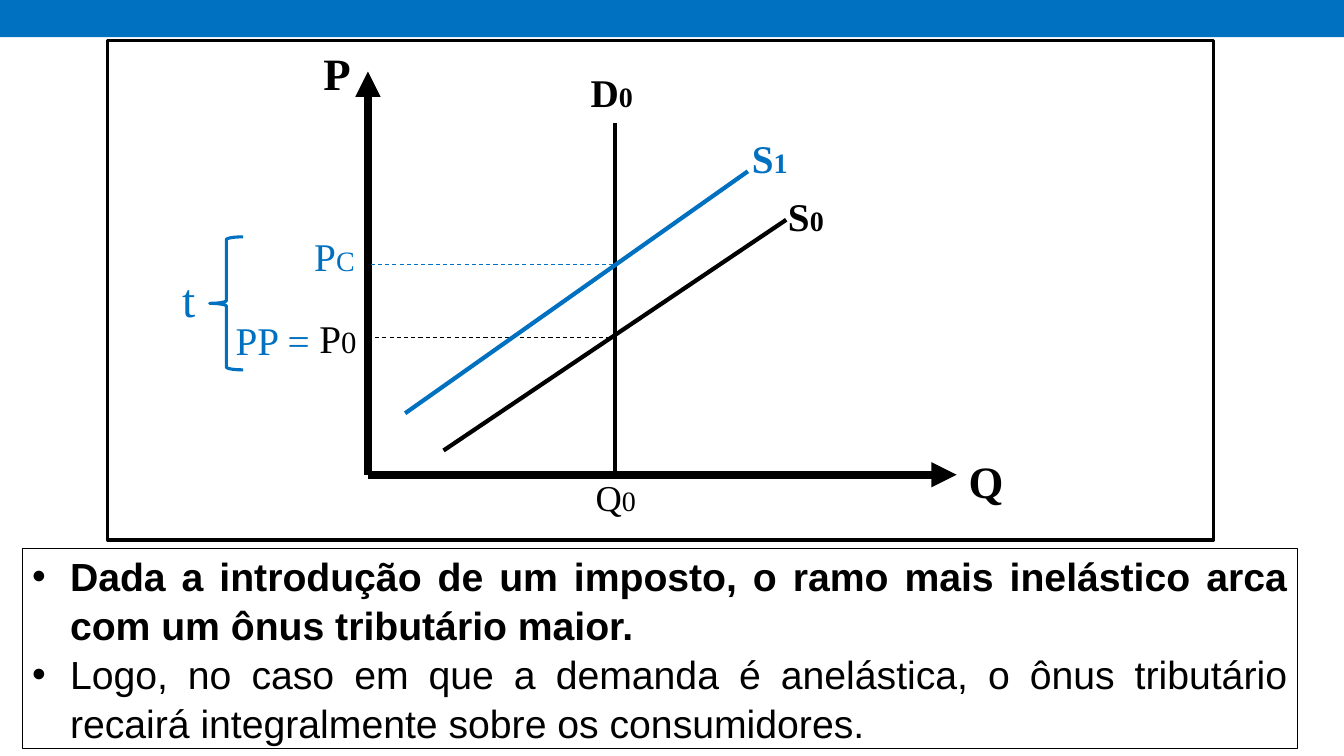
from pptx import Presentation
from pptx.dml.color import RGBColor
from pptx.enum.dml import MSO_LINE
from pptx.enum.shapes import MSO_CONNECTOR, MSO_SHAPE
from pptx.enum.text import MSO_ANCHOR, MSO_AUTO_SIZE, PP_ALIGN
from pptx.oxml.ns import qn
from pptx.util import Pt
from lxml.etree import SubElement

COLORS = {"blue": "0070C0", "black": "000000"}
SERIF, SANS = "Times New Roman", "Arial"


def rgb(name):
    return RGBColor.from_string(COLORS[name])


def write(p, *runs, font=SERIF, color="black", bold=False):
    """Fill a justified paragraph with (text, size) runs."""
    p.alignment = PP_ALIGN.JUSTIFY
    for text, size in runs:
        r = p.add_run()
        r.text = text
        r.font.name, r.font.size, r.font.bold = font, Pt(size), bold
        r.font.color.rgb = rgb(color)


def add_shape(s, kind, x, y, w, h, fill=None, line=None, width=1):
    sp = s.shapes.add_shape(kind, Pt(x), Pt(y), Pt(w), Pt(h))
    sp.shadow.inherit = False
    if fill:
        sp.fill.solid()
        sp.fill.fore_color.rgb = rgb(fill)
    else:
        sp.fill.background()
    if line:
        sp.line.color.rgb = rgb(line)
        sp.line.width = Pt(width)
    else:
        sp.line.fill.background()
    return sp


def add_line(s, x1, y1, x2, y2, color="black", width=3.0, dash=False, arrow=False):
    c = s.shapes.add_connector(MSO_CONNECTOR.STRAIGHT, Pt(x1), Pt(y1), Pt(x2), Pt(y2))
    c.line.color.rgb = rgb(color)
    c.line.width = Pt(width)
    if dash:
        c.line.dash_style = MSO_LINE.DASH
    if arrow:
        SubElement(c.line._get_or_add_ln(), qn("a:tailEnd"), type="triangle")
    SubElement(c._element.spPr, qn("a:effectLst"))


def add_label(s, x, y, w, h, *runs, **fmt):
    tf = s.shapes.add_textbox(Pt(x), Pt(y), Pt(w), Pt(h)).text_frame
    tf.word_wrap = True
    write(tf.paragraphs[0], *runs, **fmt)


def draw_diagram(s, x, y, w, h):
    """Supply and demand diagram, framed by the given box."""
    add_shape(s, MSO_SHAPE.RECTANGLE, x, y, w, h, line="black", width=2.25)

    axis_x, axis_y, demand_x = x + 185.8, y + 310.3, x + 362.2
    price_0, price_c = y + 212.4, y + 159.8
    add_line(s, axis_x, axis_y, axis_x, y + 22.3, width=6, arrow=True)
    add_line(s, axis_x, axis_y, x + 606.3, axis_y, width=6, arrow=True)
    add_line(s, demand_x, y + 59, demand_x, axis_y)
    add_line(s, axis_x, price_0, demand_x, price_0, width=0.75, dash=True)
    add_line(s, axis_x + 2, price_c, demand_x + 2, price_c, "blue", 0.75, dash=True)

    supply_curves = [(239.8, 293, 164.8, "black"), (212.4, 266.4, 172.8, "blue")]
    for left, bottom, rise, color in supply_curves:
        add_line(s, x + left, y + bottom, x + left + 244.8, y + bottom - rise, color)

    add_shape(s, MSO_SHAPE.LEFT_BRACE, x + 72.8, y + 140.4, 23.8, 95,
              line="blue", width=2.25)

    labels = [
        (478.8, 105.1, 67, 41, "black", True, ("S", 28), ("0", 20)),
        (337.7, 16.6, 95, 41, "black", True, ("D", 28), ("0", 20)),
        (146.9, 0, 27.4, 46, "black", True, ("P", 32)),
        (607.7, 291.6, 27.4, 46, "black", True, ("Q", 32)),
        (144, 192.2, 42.5, 41, "black", False, ("P", 28), ("0", 22)),
        (341.3, 306.7, 81.4, 39, "black", False, ("Q", 26), ("0", 20)),
        (452.9, 63.4, 95, 41, "blue", True, ("S", 28), ("1", 20)),
        (140.4, 133.9, 81.4, 41, "blue", False, ("P", 28), ("C", 20)),
        (84.3, 193.7, 81.4, 41, "blue", False, ("PP =", 28)),
        (46.1, 160.6, 28, 48, "blue", False, ("t", 34)),
    ]
    for left, top, lw, lh, color, bold, *runs in labels:
        add_label(s, x + left, y + top, lw, lh, *runs, color=color, bold=bold)


def fill_conclusions(body, x, y, w, h):
    body.left, body.top, body.width, body.height = Pt(x), Pt(y), Pt(w), Pt(h)
    body.line.color.rgb = rgb("black")
    body.line.width = Pt(0.75)
    tf = body.text_frame
    tf.auto_size = MSO_AUTO_SIZE.NONE
    tf.vertical_anchor = MSO_ANCHOR.MIDDLE
    items = [
        ("Dada a introdução de um imposto, o ramo mais inelástico arca com um "
         "ônus tributário maior.", True),
        ("Logo, no caso em que a demanda é anelástica, o ônus tributário recairá "
         "integralmente sobre os consumidores.", False),
    ]
    for i, (text, bold) in enumerate(items):
        p = tf.add_paragraph() if i else tf.paragraphs[0]
        pPr = p._p.get_or_add_pPr()
        pPr.set("marL", str(Pt(27)))
        pPr.set("indent", str(-Pt(27)))
        p.space_before = Pt(0)
        p.line_spacing = 1.04
        write(p, (text, 28), font=SANS, bold=bold)


def main():
    prs = Presentation()
    prs.slide_width, prs.slide_height = Pt(960), Pt(540)
    s = prs.slides.add_slide(prs.slide_layouts[1])
    title = s.shapes.title._element
    title.getparent().remove(title)

    add_shape(s, MSO_SHAPE.RECTANGLE, 0, 0, 960, 26.6, fill="blue")
    draw_diagram(s, 77, 28.8, 790, 357)
    fill_conclusions(s.placeholders[1], 15.8, 391.7, 910.8, 143.3)
    prs.save("out.pptx")


if __name__ == "__main__":
    main()
